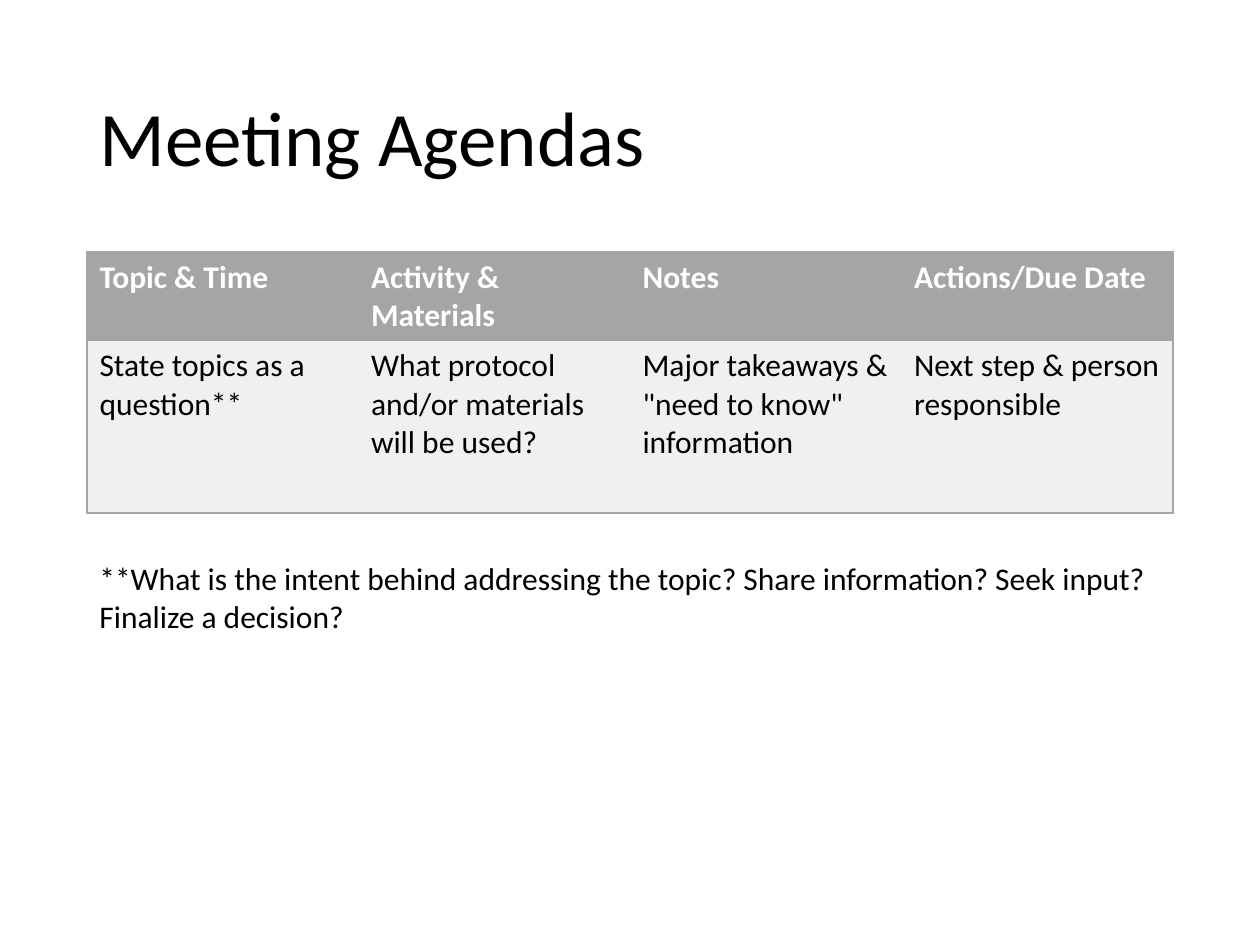
from lxml.etree import SubElement
from pptx import Presentation
from pptx.dml.color import RGBColor
from pptx.enum.text import MSO_ANCHOR
from pptx.oxml.ns import qn
from pptx.util import Inches, Pt

GRAY, PALE, WHITE, BLACK = "A5A5A5", "F0F0F0", "FFFFFF", "000000"
NO_GRID_STYLE = "{2D5ABB26-0587-4C30-8999-92F81FD0307C}"


def style_text(text_frame, size, color, bold=False):
    text_frame.word_wrap = True
    paragraph = text_frame.paragraphs[0]
    paragraph.font.name = "Calibri"
    paragraph.font.size = Pt(size)
    paragraph.font.bold = bold
    paragraph.font.color.rgb = RGBColor.from_string(color)


def add_border(cell, side):
    line = SubElement(cell._tc.get_or_add_tcPr(), qn(f"a:ln{side}"), w=str(Pt(1)))
    fill = SubElement(line, qn("a:solidFill"))
    SubElement(fill, qn("a:srgbClr"), val=GRAY)


presentation = Presentation()
presentation.slide_width = Inches(10)
presentation.slide_height = Inches(7.5)
slide = presentation.slides.add_slide(presentation.slide_layouts[6])

left = Inches(0.69)
width = presentation.slide_width - 2 * left

title = slide.shapes.add_textbox(left, Inches(0.4), width, Inches(1.45))
title.text_frame.text = "Meeting Agendas"
title.text_frame.vertical_anchor = MSO_ANCHOR.MIDDLE
title.text_frame.paragraphs[0].line_spacing = 0.9
style_text(title.text_frame, 44, BLACK)

agenda = [
    ["Topic & Time", "Activity & Materials", "Notes", "Actions/Due Date"],
    [
        "State topics as a question**",
        "What protocol and/or materials will be used?",
        "Major takeaways & \"need to know\" information",
        "Next step & person responsible",
    ],
]
row_heights = [0.7, 1.37]
row_styles = [(GRAY, WHITE, True), (PALE, BLACK, False)]
last_column = len(agenda[0]) - 1

table_frame = slide.shapes.add_table(
    len(agenda), len(agenda[0]), left, Inches(2), width, Inches(sum(row_heights))
)
table = table_frame.table
table._tbl.tblPr.find(qn("a:tableStyleId")).text = NO_GRID_STYLE

for row, (labels, height, (fill, color, bold)) in enumerate(zip(agenda, row_heights, row_styles)):
    table.rows[row].height = Inches(height)
    for column, label in enumerate(labels):
        cell = table.cell(row, column)
        cell.text = label
        style_text(cell.text_frame, 18, color, bold)
        if column == 0:
            add_border(cell, "L")
        if column == last_column:
            add_border(cell, "R")
        for side in "TB":
            add_border(cell, side)
        cell.fill.solid()
        cell.fill.fore_color.rgb = RGBColor.from_string(fill)

footnote = slide.shapes.add_textbox(left, Inches(4.39), width, Inches(0.71))
footnote.text_frame.text = (
    "**What is the intent behind addressing the topic? "
    "Share information? Seek input? Finalize a decision?"
)
style_text(footnote.text_frame, 18, BLACK)

presentation.save("out.pptx")
